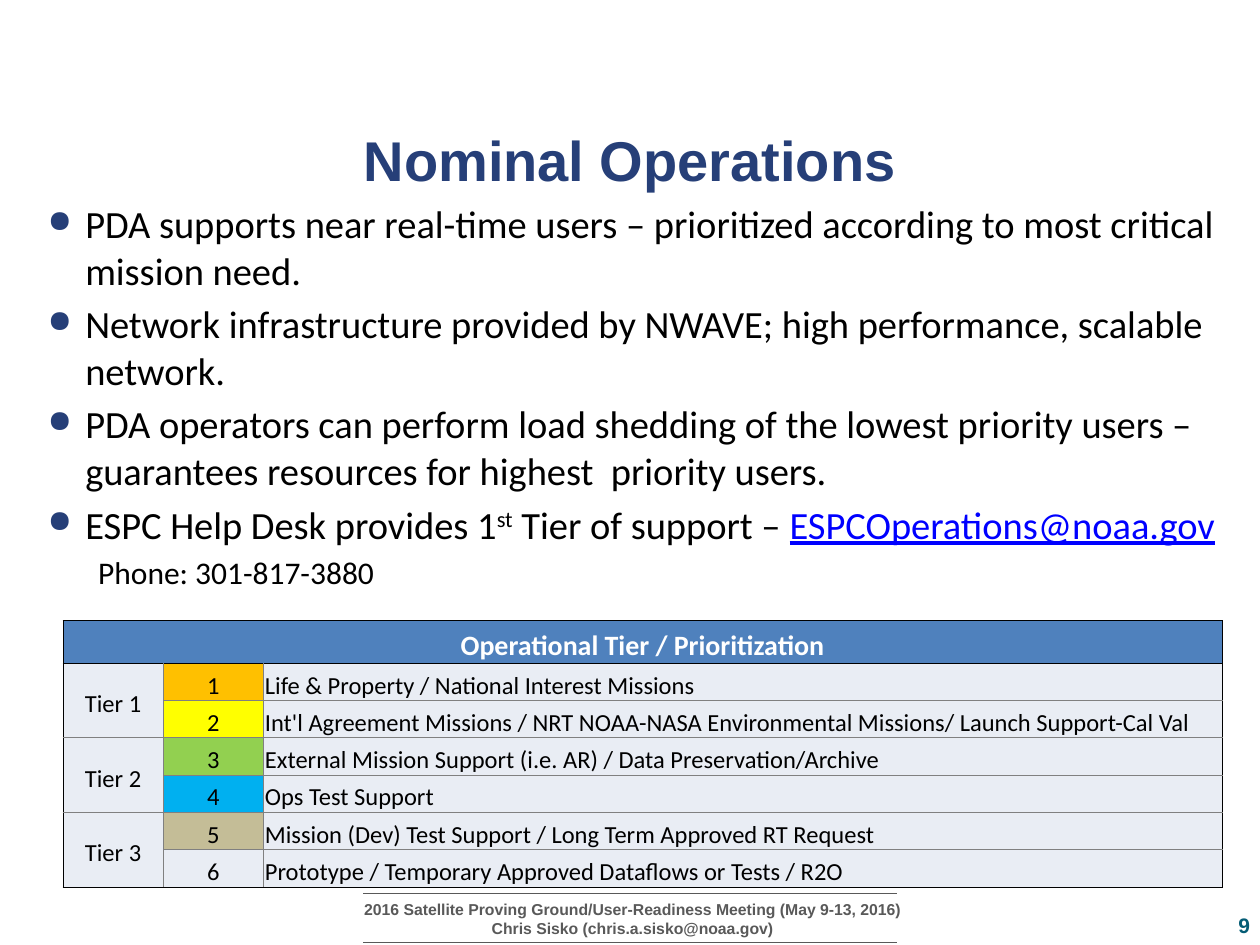
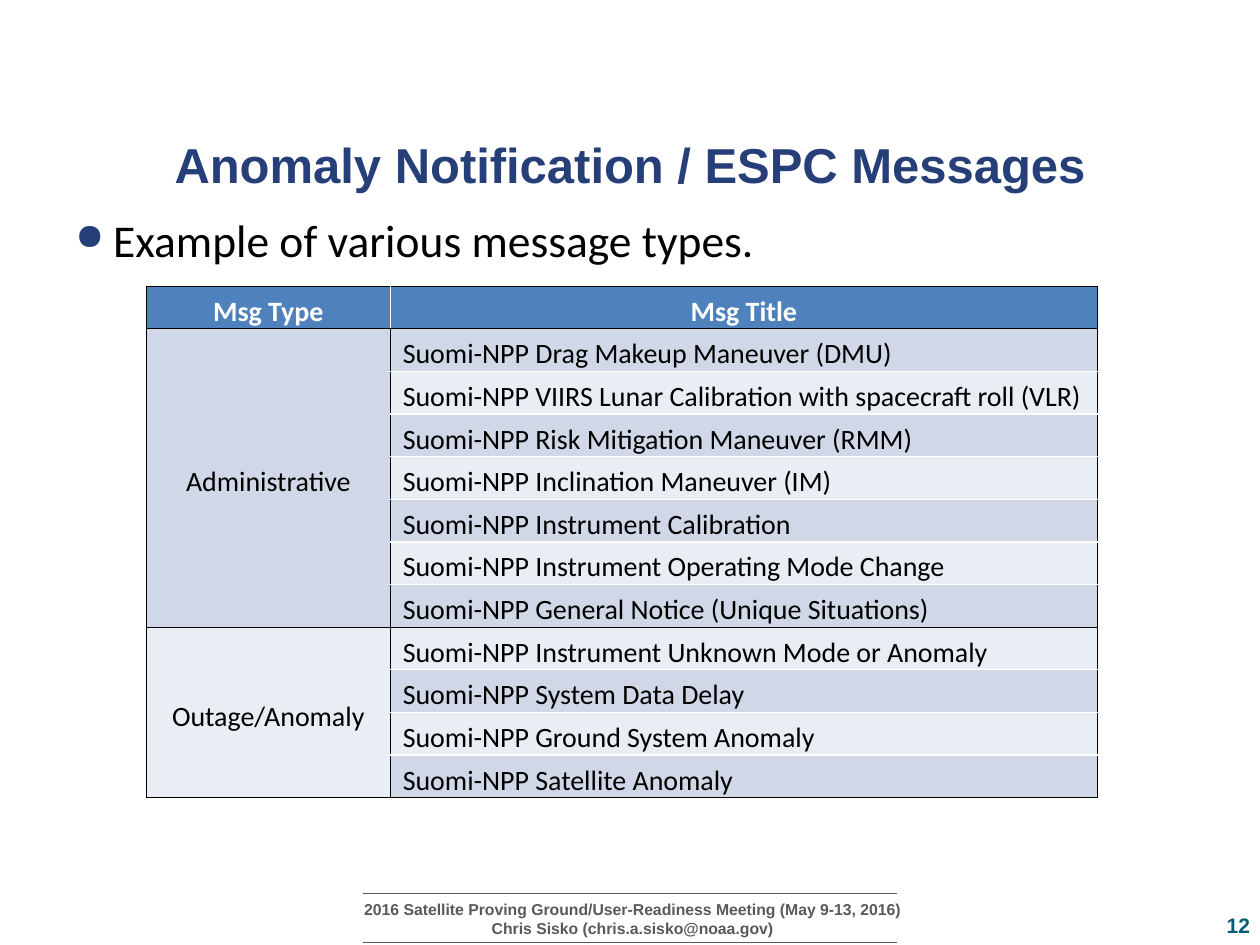
import pptx
import pptx.dml.color
import pptx.enum.shapes
import pptx.enum.text
import pptx.util
from lxml import etree

Cm, Pt = pptx.util.Cm, pptx.util.Pt
ALIGN = pptx.enum.text.PP_ALIGN
ANCHOR = pptx.enum.text.MSO_ANCHOR
DRAWING = "http://schemas.openxmlformats.org/drawingml/2006/main"

NAVY, TEAL, GREY, BLACK, WHITE = "263F78", "045C75", "595959", "000000", "FFFFFF"
HEADER, PALE, BAND, GRID, LINK = "4F81BD", "E9EDF4", "D0D8E8", "808080", "0000FF"


def colour(value):
    return pptx.dml.color.RGBColor.from_string(value)


def add_xml(parent, tag, **attributes):
    return etree.SubElement(parent, f"{{{DRAWING}}}{tag}", attributes)


def add_colour_xml(parent, value):
    add_xml(parent, "srgbClr", val=value)


class Slides:
    """Holds the shared style and the current page."""

    heading_font = "Arial"
    body_font = "Calibri"

    def __init__(self):
        self.deck = pptx.Presentation()
        self.deck.slide_width = Cm(25.4)
        self.deck.slide_height = Cm(19.05)
        self.page = None

    def start(self, title, size, number):
        self.page = self.deck.slides.add_slide(self.deck.slide_layouts[5])
        self.footer(number)
        box = self.page.shapes.title
        box.left, box.top, box.width, box.height = Cm(1.27), Cm(2.49), Cm(22.86), Cm(1.4)
        self.frame(box, ANCHOR.BOTTOM, (0, 0.13, 0, 0))
        para = box.text_frame.paragraphs[0]
        para.text = title
        self.format(para, self.heading_font, size, NAVY, True, ALIGN.CENTER)

    def frame(self, box, anchor, margins):
        frame = box.text_frame
        frame.word_wrap = True
        frame.auto_size = pptx.enum.text.MSO_AUTO_SIZE.NONE
        frame.vertical_anchor = anchor
        (frame.margin_left, frame.margin_top,
         frame.margin_right, frame.margin_bottom) = map(Cm, margins)

    def format(self, para, font, size, ink, bold=False, align=ALIGN.LEFT):
        para.alignment = align
        para.font.name = font
        para.font.size = Pt(size)
        para.font.bold = bold
        para.font.color.rgb = colour(ink)

    def text_box(self, left, top, width, height, anchor=ANCHOR.TOP,
                 margins=(0.25, 0.13, 0.25, 0.13)):
        box = self.page.shapes.add_textbox(Cm(left), Cm(top), Cm(width), Cm(height))
        self.frame(box, anchor, margins)
        return box

    def rule(self, left, right, y):
        line = self.page.shapes.add_connector(
            pptx.enum.shapes.MSO_CONNECTOR.STRAIGHT, Cm(left), Cm(y), Cm(right), Cm(y))
        line.line.color.rgb = colour(GREY)
        line.line.width = Pt(0.75)
        add_xml(line._element.spPr, "effectLst")

    def footer(self, number):
        for y in (19, 18.01):
            self.rule(7.32, 18.08, y)
        frame = self.text_box(6.4, 18.01, 12.7, 1.02).text_frame
        frame.text = ("2016 Satellite Proving Ground/User-Readiness Meeting (May 9-13, 2016)\n"
                      "Chris Sisko (chris.a.sisko@noaa.gov)")
        for para in frame.paragraphs:
            self.format(para, self.heading_font, 9, GREY, True, ALIGN.CENTER)
        box = self.text_box(23.09, 17.88, 2.11, 1.02, ANCHOR.BOTTOM, (0, 0, 0, 0))
        para = box.text_frame.paragraphs[0]
        para.text = str(number)
        self.format(para, self.heading_font, 12, TEAL, True, ALIGN.RIGHT)

    def bullets(self, box, items, size):
        """Adds bulleted paragraphs to an empty box and returns the last one."""
        frame = box.text_frame
        for index, item in enumerate(items):
            para = frame.paragraphs[0] if index == 0 else frame.add_paragraph()
            para.text = item
            if index:
                para.space_before = Pt(0.2 * size)
            props = para._p.get_or_add_pPr()
            props.set("marL", str(Cm(0.76)))
            props.set("indent", str(-Cm(0.76)))
            add_colour_xml(add_xml(props, "buClr"), NAVY)
            add_xml(props, "buSzPct", val="80000")
            add_xml(props, "buChar", char="●")
            self.format(para, self.body_font, size, BLACK)
        return para

    def border(self, cell, edges):
        """Draws the left, right, top and bottom edges of a cell."""
        props = cell._tc.get_or_add_tcPr()
        for index, (side, ink) in enumerate(zip("LRTB", edges)):
            width = 1 if ink == WHITE else 0.5
            line = add_xml(props, f"ln{side}", w=str(Pt(width)))
            add_colour_xml(add_xml(line, "solidFill"), ink)
            props.insert(index, line)

    def table(self, left, top, widths, heights, cells, merges, size, indent,
              inner, strong_rows, strong_columns=False):
        """Cells hold (text, fill), or None where a merged cell covers them."""
        last_column = len(widths) - 1
        table = self.page.shapes.add_table(
            len(heights), len(widths), Cm(left), Cm(top),
            Cm(sum(widths)), Cm(sum(heights))).table
        table.first_row = table.horz_banding = False
        for column, width in zip(table.columns, widths):
            column.width = Cm(width)
        for row, height in zip(table.rows, heights):
            row.height = Cm(height)
        for first, last in merges:
            table.cell(*first).merge(table.cell(*last))

        def across(y):
            return BLACK if y in strong_rows else inner

        def down(x, row):
            outer = x in (0, last_column + 1)
            return BLACK if outer or (strong_columns and row) else inner

        for row, contents in enumerate(cells):
            for column, content in enumerate(contents):
                cell = table.cell(row, column)
                if content is None:
                    continue
                text, fill = content
                is_header = row == 0
                is_label = is_header or column < last_column
                cell.margin_left = Cm(0.03 if is_label else indent)
                cell.margin_top = cell.margin_right = Cm(0.03)
                cell.margin_bottom = 0
                cell.vertical_anchor = ANCHOR.MIDDLE
                cell.fill.solid()
                cell.fill.fore_color.rgb = colour(fill)
                para = cell.text_frame.paragraphs[0]
                para.text = text
                para.line_spacing = 1.2
                self.format(para, self.body_font, 16 if is_header else size,
                            WHITE if is_header else BLACK, is_header,
                            ALIGN.CENTER if is_label else ALIGN.LEFT)
                self.border(cell, (down(column, row),
                                   down(column + cell.span_width, row),
                                   across(row), across(row + cell.span_height)))


def nominal_operations(slides):
    slides.start("Nominal Operations", 32, 9)

    # Bullets, with the help desk contact
    box = slides.text_box(0.71, 3.91, 24.26, 8.99)
    para = slides.bullets(box, [
        "PDA supports near real-time users – prioritized according to most critical mission need.",
        "Network infrastructure provided by NWAVE; high performance, scalable network.",
        "PDA operators can perform load shedding of the lowest priority users – "
        "guarantees resources for highest  priority users.",
        "ESPC Help Desk provides 1",
    ], 22)
    ordinal, support, address = (para.add_run() for _ in range(3))
    ordinal.text = "st"
    ordinal._r.get_or_add_rPr().set("baseline", "30000")
    support.text = " Tier of support – "
    address.text = "ESPCOperations@noaa.gov"
    address.font.underline = True
    address.font.color.rgb = colour(LINK)
    phone = box.text_frame.add_paragraph()
    phone.text = "Phone: 301-817-3880"
    phone.space_before = Pt(3.6)
    phone._p.get_or_add_pPr().set("marL", str(Cm(1.02)))
    slides.format(phone, slides.body_font, 18, BLACK)

    # Priority table: two priorities to a tier
    priorities = [
        ("FFC000", "Life & Property / National Interest Missions"),
        ("FFFF00", "Int'l Agreement Missions / NRT NOAA-NASA Environmental Missions/ "
                   "Launch Support-Cal Val"),
        ("92D050", "External Mission Support (i.e. AR) / Data Preservation/Archive"),
        ("00B0F0", "Ops Test Support"),
        ("C4BD97", "Mission (Dev) Test Support / Long Term Approved RT Request"),
        (PALE, "Prototype / Temporary Approved Dataflows or Tests / R2O"),
    ]
    cells = [[("Operational Tier / Prioritization", HEADER), None, None]]
    for index, (fill, mission) in enumerate(priorities):
        tier = None if index % 2 else (f"Tier {index // 2 + 1}", PALE)
        cells.append([tier, (str(index + 1), fill), (mission, PALE)])
    merges = [((0, 0), (0, 2))] + [((row, 0), (row + 1, 0)) for row in (1, 3, 5)]
    slides.table(1.27, 12.51, [2.02, 2.02, 19.33], [0.86] + [0.75] * 6, cells, merges,
                 size=14, indent=0.03, inner=GRID, strong_rows=(0, 1, 7))


def anomaly_notification(slides):
    slides.start("Anomaly Notification / ESPC Messages", 28, 12)

    # Message table: one merged label for each type
    messages = {
        "Administrative": [
            "Drag Makeup Maneuver (DMU)",
            "VIIRS Lunar Calibration with spacecraft roll (VLR)",
            "Risk Mitigation Maneuver (RMM)",
            "Inclination Maneuver (IM)",
            "Instrument Calibration",
            "Instrument Operating Mode Change",
            "General Notice (Unique Situations)",
        ],
        "Outage/Anomaly": [
            "Instrument Unknown Mode or Anomaly",
            "System Data Delay",
            "Ground System Anomaly",
            "Satellite Anomaly",
        ],
    }
    cells = [[("Msg Type", HEADER), ("Msg Title", HEADER)]]
    merges, strong_rows = [], [0, 1]
    for kind, titles in messages.items():
        first = len(cells)
        for title in titles:
            fill = BAND if len(cells) % 2 else PALE
            label = (kind, fill) if len(cells) == first else None
            cells.append([label, (f"Suomi-NPP {title}", fill)])
        merges.append(((first, 0), (len(cells) - 1, 0)))
        strong_rows.append(len(cells))
    slides.table(2.95, 5.77, [4.92, 14.25], [0.85] * len(cells), cells, merges,
                 size=16, indent=0.25, inner=WHITE, strong_rows=strong_rows,
                 strong_columns=True)

    # Introduction
    box = slides.text_box(1.27, 4.14, 22.86, 1.88)
    slides.bullets(box, ["Example of various message types."], 26)


def main():
    slides = Slides()
    nominal_operations(slides)
    anomaly_notification(slides)
    slides.deck.save("out.pptx")


if __name__ == "__main__":
    main()
